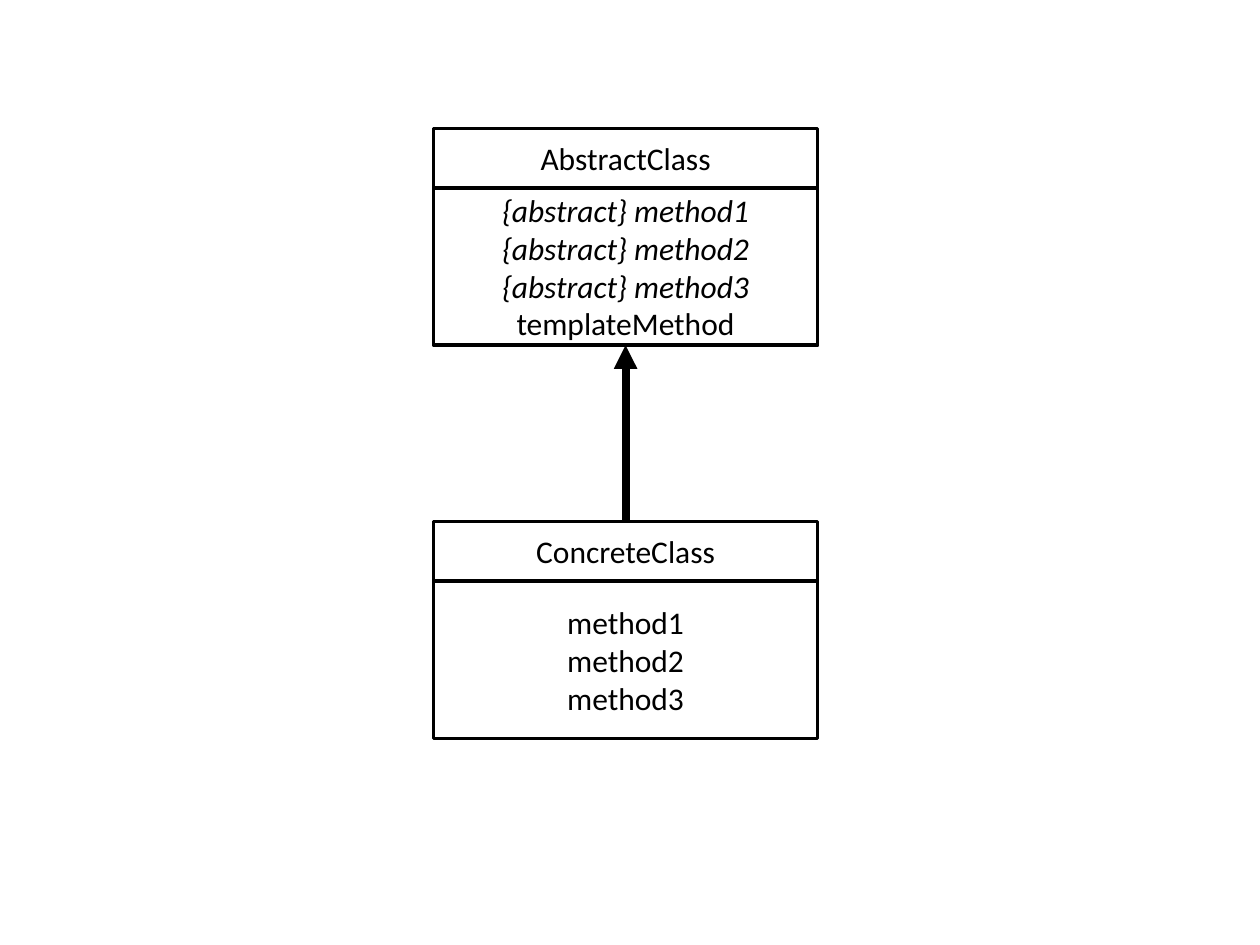
"""Builds a class diagram of the template method pattern."""
from lxml import etree
from pptx import Presentation
from pptx.dml.color import RGBColor
from pptx.enum.shapes import MSO_CONNECTOR, MSO_SHAPE
from pptx.enum.text import MSO_ANCHOR, PP_ALIGN
from pptx.oxml.ns import qn
from pptx.util import Inches, Pt

RECTANGLE = MSO_SHAPE.RECTANGLE
STRAIGHT = MSO_CONNECTOR.STRAIGHT
MIDDLE = MSO_ANCHOR.MIDDLE
CENTER = PP_ALIGN.CENTER

COLORS = {"ink": "000000", "paper": "FFFFFF"}
FONT = "Calibri"
LEFT, WIDTH = 3.44, 3.05
NAME_HEIGHT, METHODS_HEIGHT = 0.47, 1.25
TOP_SIDE, BOTTOM_SIDE = 0, 2
ABSTRACT_MARK = "{abstract}"


def color(key):
    """Return the named colour."""
    return RGBColor.from_string(COLORS[key])


def add_compartment(slide, top, height, entries):
    """Add one outlined box with a centred line for each entry."""
    compartment = slide.shapes.add_shape(
        RECTANGLE, Inches(LEFT), Inches(top), Inches(WIDTH), Inches(height))
    compartment.shadow.inherit = False
    compartment.fill.solid()
    compartment.fill.fore_color.rgb = color("paper")
    compartment.line.color.rgb = color("ink")
    compartment.line.width = Pt(2)
    frame = compartment.text_frame
    frame.word_wrap = True
    frame.vertical_anchor = MIDDLE
    for index, entry in enumerate(entries):
        paragraph = frame.add_paragraph() if index else frame.paragraphs[0]
        paragraph.text = entry
        paragraph.alignment = CENTER
        paragraph.font.name = FONT
        paragraph.font.size = Pt(18)
        paragraph.font.color.rgb = color("ink")
        paragraph.font.italic = entry.startswith(ABSTRACT_MARK)
    return compartment


def add_class(slide, top, name, methods):
    """Add a class as a name box above a methods box and return both."""
    name_box = add_compartment(slide, top, NAME_HEIGHT, [name])
    methods_box = add_compartment(
        slide, top + NAME_HEIGHT, METHODS_HEIGHT, methods)
    return name_box, methods_box


def add_inheritance(slide, child, parent):
    """Add an arrow from the top of the child to the bottom of the parent."""
    arrow = slide.shapes.add_connector(STRAIGHT, 0, 0, 0, 0)
    arrow.begin_connect(child, TOP_SIDE)
    arrow.end_connect(parent, BOTTOM_SIDE)
    arrow.line.color.rgb = color("ink")
    arrow.line.width = Pt(4.5)
    outline = arrow.line._get_or_add_ln()
    etree.SubElement(outline, qn("a:tailEnd"), type="triangle")
    etree.SubElement(arrow._element.spPr, qn("a:effectLst"))


def main():
    """Build and save the slide."""
    deck = Presentation()
    deck.slide_width, deck.slide_height = Inches(10), Inches(7.5)
    slide = deck.slides.add_slide(deck.slide_layouts[6])
    steps = [f"method{number}" for number in range(1, 4)]
    abstract_steps = [f"{ABSTRACT_MARK} {step}" for step in steps]
    _, parent_methods = add_class(
        slide, 1.02, "AbstractClass", abstract_steps + ["templateMethod"])
    child_name, _ = add_class(slide, 4.14, "ConcreteClass", steps)
    add_inheritance(slide, child_name, parent_methods)
    deck.save("out.pptx")


if __name__ == "__main__":
    main()
